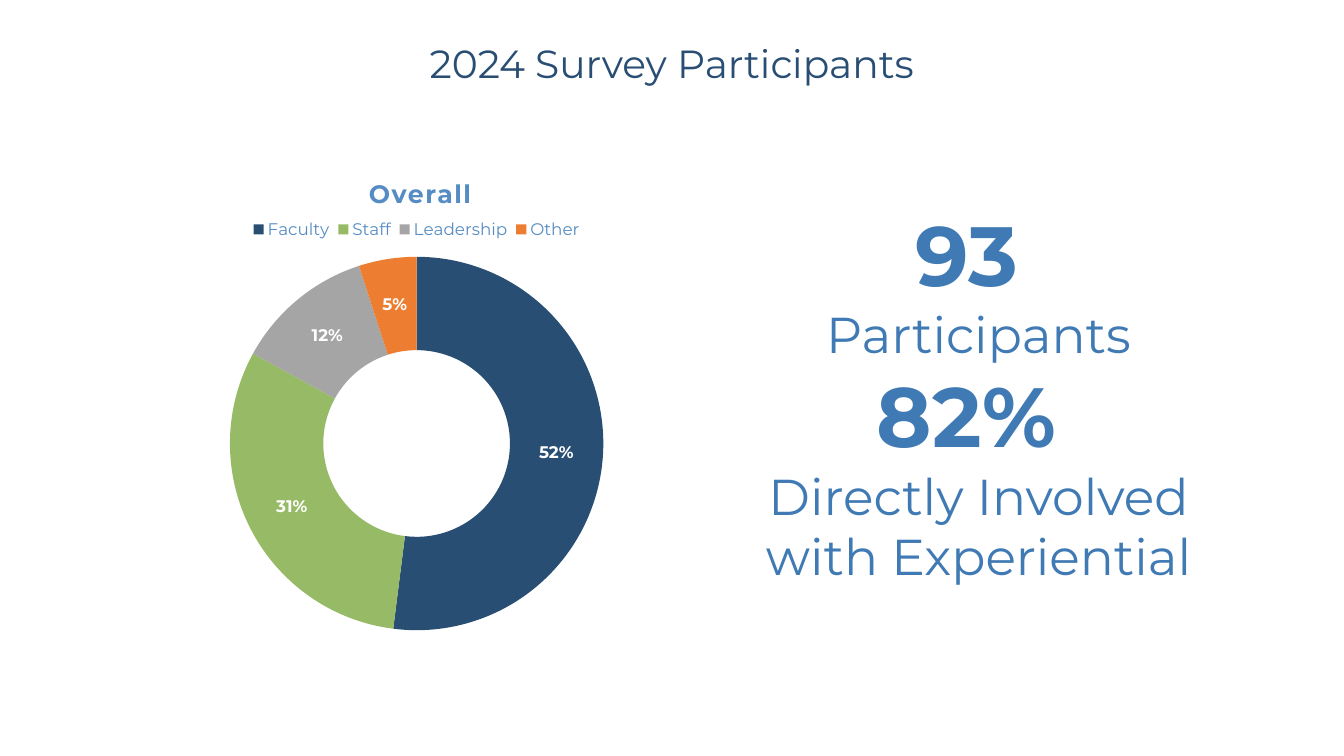
"""Build the survey participants slide with a doughnut chart and key figures."""
from lxml.etree import SubElement
from pptx import Presentation
from pptx.chart.data import CategoryChartData
from pptx.dml.color import RGBColor
from pptx.enum.chart import XL_CHART_TYPE, XL_LEGEND_POSITION
from pptx.enum.text import PP_ALIGN
from pptx.oxml.ns import qn
from pptx.util import Cm, Pt

FONT = "Montserrat"
NAVY, BLUE, LIGHT_BLUE, WHITE = "294E73", "407AB4", "558CC3", "FFFFFF"

HEADING = [("2024 Survey Participants", 28, False)]
KEY_FIGURES = [
    ("93 ", 60, True),
    ("Participants", 36, False),
    ("82% ", 60, True),
    ("Directly Involved with Experiential", 36, False),
]
CHART_TITLE = "Overall"
ROLES = [
    ("Faculty", 52, NAVY),
    ("Staff", 31, "96BA65"),
    ("Leadership", 12, "A5A5A5"),
    ("Other", 5, "ED7D31"),
]

HEADING_BOX = (8.46, 0.86, 16.94, 1.45)
FIGURES_BOX = (18.26, 4.98, 12.8, 10.01)
CHART_BOX = (1.09, 3.71, 18.82, 12.55)
TITLE_PLACE = {"x": 0.43, "y": 0.05}
LEGEND_PLACE = {"x": 0.27, "y": 0.14, "w": 0.46, "h": 0.05}
RING_PLACE = {"x": 0.25, "y": 0.22, "w": 0.5, "h": 0.75}


def rgb(color):
    return RGBColor.from_string(color)


def style(font, size, color, bold=False):
    font.name, font.size, font.bold = FONT, Pt(size), bold
    font.color.rgb = rgb(color)


def add_lines(slide, box, lines, color):
    frame = slide.shapes.add_textbox(*map(Cm, box)).text_frame
    frame.word_wrap = True
    for index, (wording, size, bold) in enumerate(lines):
        line = frame.paragraphs[0] if index == 0 else frame.add_paragraph()
        line.text = wording
        line.alignment = PP_ALIGN.CENTER
        style(line.font, size, color, bold)


def place(part, position, fractions, inner=False):
    for old in part.findall(qn("c:layout")):
        part.remove(old)
    layout = part.makeelement(qn("c:layout"))
    part.insert(position, layout)
    manual = SubElement(layout, qn("c:manualLayout"))
    if inner:
        SubElement(manual, qn("c:layoutTarget")).set("val", "inner")
    for side in ("x", "y"):
        SubElement(manual, qn(f"c:{side}Mode")).set("val", "edge")
    for side, fraction in fractions.items():
        SubElement(manual, qn(f"c:{side}")).set("val", str(fraction))


def add_roles_chart(slide):
    shares = CategoryChartData()
    shares.categories = [role for role, _, _ in ROLES]
    shares.add_series("Series 1", [share for _, share, _ in ROLES])
    chart = slide.shapes.add_chart(
        XL_CHART_TYPE.DOUGHNUT, *map(Cm, CHART_BOX), shares).chart
    style(chart.font, 10, NAVY)

    chart.has_title = True
    title = chart.chart_title.text_frame.paragraphs[0]
    title.text = CHART_TITLE
    style(title.font, 18, LIGHT_BLUE, True)
    title.runs[0].font.bold = True
    for properties in title._p.iter(qn("a:defRPr"), qn("a:rPr")):
        properties.set("spc", "100")
    place(chart.chart_title._element, 1, TITLE_PLACE)

    chart.has_legend = True
    chart.legend.position = XL_LEGEND_POSITION.TOP
    chart.legend.include_in_layout = False
    style(chart.legend.font, 12, LIGHT_BLUE)
    place(chart.legend._element, 1, LEGEND_PLACE)

    ring = chart.plots[0]
    ring.vary_by_categories = True
    for index, (_, _, color) in enumerate(ROLES):
        fill = ring.series[0].points[index].format.fill
        fill.solid()
        fill.fore_color.rgb = rgb(color)
    labels = ring.series[0].data_labels
    labels.show_percentage, labels.show_value = True, False
    labels.number_format, labels.number_format_is_linked = "0%", False
    style(labels.font, 12, WHITE, True)
    place(chart._chartSpace.chart.plotArea, 0, RING_PLACE, inner=True)


def main():
    deck = Presentation()
    deck.slide_width, deck.slide_height = Cm(33.87), Cm(19.05)
    slide = deck.slides.add_slide(deck.slide_layouts[6])
    add_lines(slide, FIGURES_BOX, KEY_FIGURES, BLUE)
    add_lines(slide, HEADING_BOX, HEADING, NAVY)
    add_roles_chart(slide)
    deck.save("out.pptx")


if __name__ == "__main__":
    main()
